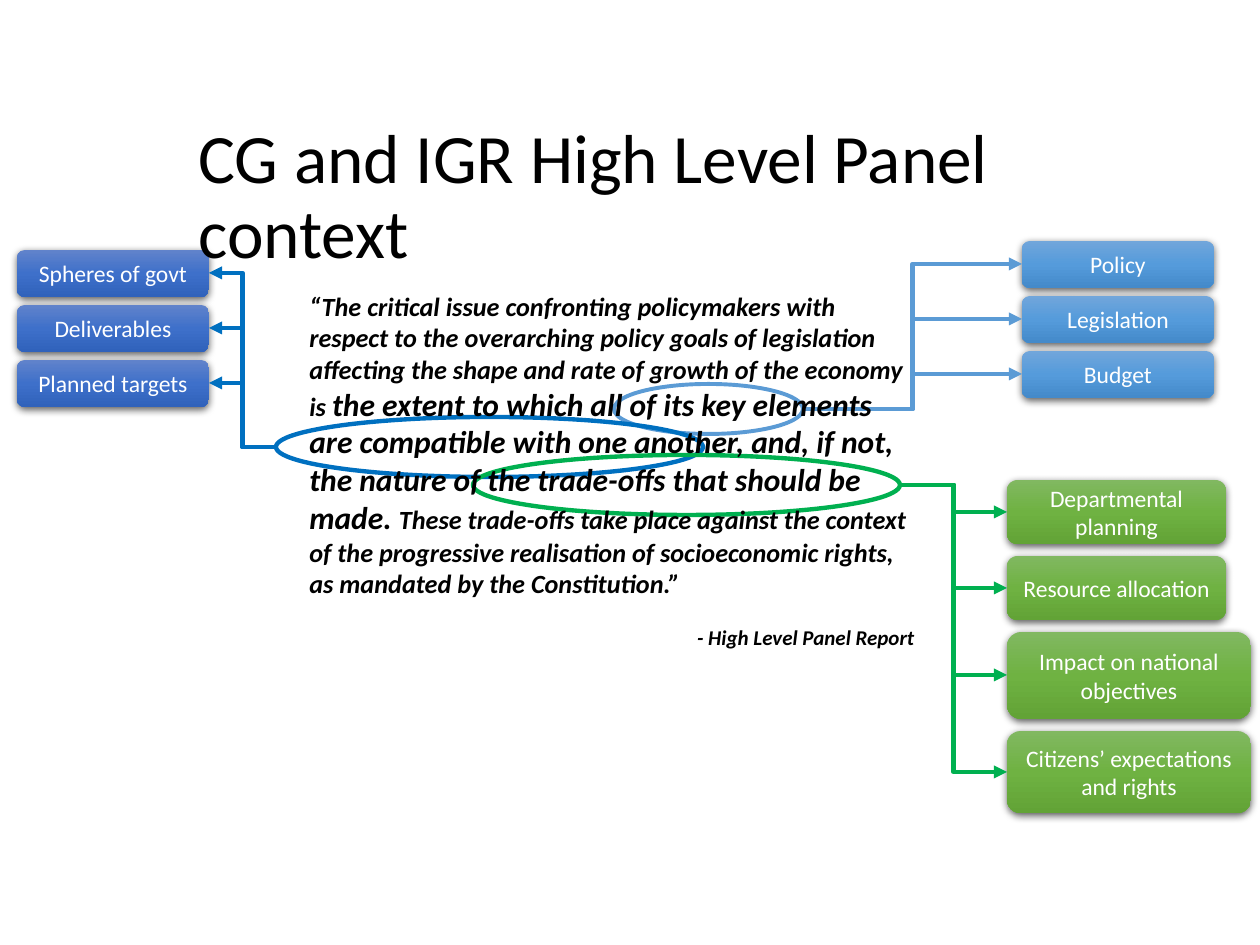
"""Build a slide of a panel quotation whose key phrases branch out to labelled boxes."""
from copy import deepcopy
from dataclasses import dataclass

from lxml import etree
from pptx import Presentation
from pptx.dml.color import RGBColor
from pptx.enum.shapes import MSO_CONNECTOR, MSO_SHAPE
from pptx.enum.text import MSO_ANCHOR, MSO_AUTO_SIZE, PP_ALIGN
from pptx.oxml.ns import qn
from pptx.util import Emu, Pt

ELBOW = MSO_CONNECTOR.ELBOW
OVAL, ROUNDED = MSO_SHAPE.OVAL, MSO_SHAPE.ROUNDED_RECTANGLE
LEFT, CENTER, RIGHT = PP_ALIGN.LEFT, PP_ALIGN.CENTER, PP_ALIGN.RIGHT
MIDDLE = MSO_ANCHOR.MIDDLE
FIT_SHAPE, NO_FIT = MSO_AUTO_SIZE.SHAPE_TO_FIT_TEXT, MSO_AUTO_SIZE.NONE

PX = 914400 // 126
FONT = "Calibri"
COLORS = {
    "text": "000000",
    "label": "FFFFFF",
    "shadow": "000000",
    "sky": "5B9BD5",
    "blue": "0070C0",
    "green": "00B050",
}
GRADIENTS = {
    "sky": ("71A6DB", "559BDB", "448ACA"),
    "blue": ("6183CB", "3E70CA", "3062BB"),
    "green": ("81B861", "6FB242", "62A336"),
}


@dataclass(frozen=True)
class Area:
    left: int
    top: int
    width: int
    height: int

    @property
    def middle(self) -> int:
        return self.top + self.height // 2

    @property
    def right(self) -> int:
        return self.left + self.width

    def emu(self) -> tuple:
        return tuple(Emu(v * PX) for v in (self.left, self.top, self.width, self.height))


@dataclass(frozen=True)
class Topic:
    label: str
    width: int = 192
    height: int = 47


@dataclass(frozen=True)
class Branch:
    color: str
    weight: float
    phrase: Area
    left: int
    top: int
    gap: int
    topics: tuple


BRANCHES = (
    Branch("sky", 2.25, Area(614, 384, 189, 50), 1022, 241, 8,
           (Topic("Policy"), Topic("Legislation"), Topic("Budget"))),
    Branch("blue", 2.5, Area(276, 417, 427, 60), 17, 250, 8,
           (Topic("Spheres of govt"), Topic("Deliverables"), Topic("Planned targets"))),
    Branch("green", 2.5, Area(473, 455, 427, 60), 1007, 480, 12,
           (Topic("Departmental planning", 219, 64),
            Topic("Resource allocation", 219, 64),
            Topic("Impact on national objectives", 244, 87),
            Topic("Citizens’ expectations and rights", 244, 82))),
)
QUOTE = (
    ("“The critical issue confronting policymakers with respect to the overarching policy goals "
     "of legislation affecting the shape and rate of growth of the economy is ", 15),
    ("the extent to which all of its key elements are compatible with one another, and, if not, "
     "the nature of the trade-offs that should be made. ", 18),
    ("These trade-offs take place against the context of the progressive realisation of "
     "socioeconomic rights, as mandated by the Constitution.”", 15),
)


def rgb(value: str) -> RGBColor:
    return RGBColor.from_string(value)


def write(paragraph, text: str, *, size: float, color: str = "text",
          align=LEFT, strong: bool = False) -> None:
    paragraph.alignment = align
    run = paragraph.add_run()
    run.text = text
    run.font.name = FONT
    run.font.size = Pt(size)
    run.font.bold = run.font.italic = strong
    run.font.color.rgb = rgb(COLORS[color])


def add_shadow(shape) -> None:
    shape.shadow.inherit = False
    effects = shape.element.spPr.find(qn("a:effectLst"))
    shadow = etree.SubElement(effects, qn("a:outerShdw"), blurRad=str(Pt(4.5)),
                              dist=str(Pt(1.5)), dir="5400000", rotWithShape="0")
    tint = etree.SubElement(shadow, qn("a:srgbClr"), val=COLORS["shadow"])
    etree.SubElement(tint, qn("a:alpha"), val="63000")


def fill_gradient(shape, hues: tuple) -> None:
    shape.fill.gradient()
    shape.fill.gradient_angle = 270
    stop_list = next(shape.element.spPr.iter(qn("a:gsLst")))
    stop_list.append(deepcopy(stop_list[-1]))
    for index, (stop, hue) in enumerate(zip(shape.fill.gradient_stops, hues)):
        stop.color.rgb = rgb(hue)
        stop.position = index / 2


def draw_topic(shapes, topic: Topic, area: Area, color: str) -> None:
    box = shapes.add_shape(ROUNDED, *area.emu())
    fill_gradient(box, GRADIENTS[color])
    box.line.fill.background()
    add_shadow(box)
    box.text_frame.word_wrap = True
    box.text_frame.vertical_anchor = MIDDLE
    write(box.text_frame.paragraphs[0], topic.label, size=13.5, color="label", align=CENTER)


def draw_arrow(shapes, start: tuple, end: tuple, color: str) -> None:
    arrow = shapes.add_connector(ELBOW, *(Emu(v * PX) for v in start + end))
    arrow.line.color.rgb = rgb(COLORS[color])
    arrow.line.width = Pt(2.5)
    etree.SubElement(arrow.line._get_or_add_ln(), qn("a:tailEnd"), type="triangle")
    etree.SubElement(arrow.element.spPr, qn("a:effectLst"))


def draw_branch(slide, branch: Branch) -> None:
    shapes = slide.shapes.add_group_shape().shapes
    phrase = branch.phrase
    ring = shapes.add_shape(OVAL, *phrase.emu())
    ring.fill.background()
    ring.line.color.rgb = rgb(COLORS[branch.color])
    ring.line.width = Pt(branch.weight)
    ring.shadow.inherit = False

    areas = []
    top = branch.top
    for topic in branch.topics:
        areas.append(Area(branch.left, top, topic.width, topic.height))
        draw_topic(shapes, topic, areas[-1], branch.color)
        top += topic.height + branch.gap

    rightward = branch.left > phrase.left
    start = (phrase.right if rightward else phrase.left, phrase.middle)
    for area in areas:
        end = (area.left if rightward else area.right, area.middle)
        draw_arrow(shapes, start, end, branch.color)


def draw_quote(slide) -> None:
    frame = slide.shapes.add_textbox(*Area(297, 284, 630, 407).emu()).text_frame
    frame.word_wrap = True
    frame.auto_size = FIT_SHAPE
    for text, size in QUOTE:
        write(frame.paragraphs[0], text, size=size, strong=True)
    credit = frame.add_paragraph()
    credit.space_before = Pt(14.6)
    write(credit, "- High Level Panel Report", size=12, align=RIGHT, strong=True)


def draw_title(slide) -> None:
    title = slide.shapes.title
    title.left, title.top, title.width, title.height = Area(186, 130, 869, 137).emu()
    frame = title.text_frame
    frame.word_wrap = True
    frame.auto_size = NO_FIT
    frame.vertical_anchor = MIDDLE
    heading = frame.paragraphs[0]
    heading.line_spacing = 0.9
    write(heading, "CG and IGR High Level Panel context", size=39.6)
    slide.shapes.element.append(title.element)


def main() -> None:
    deck = Presentation()
    deck.slide_width, deck.slide_height = Emu(1260 * PX), Emu(945 * PX)
    slide = deck.slides.add_slide(deck.slide_layouts[5])
    for branch in BRANCHES:
        draw_branch(slide, branch)
    draw_quote(slide)
    draw_title(slide)
    deck.save("out.pptx")


if __name__ == "__main__":
    main()
